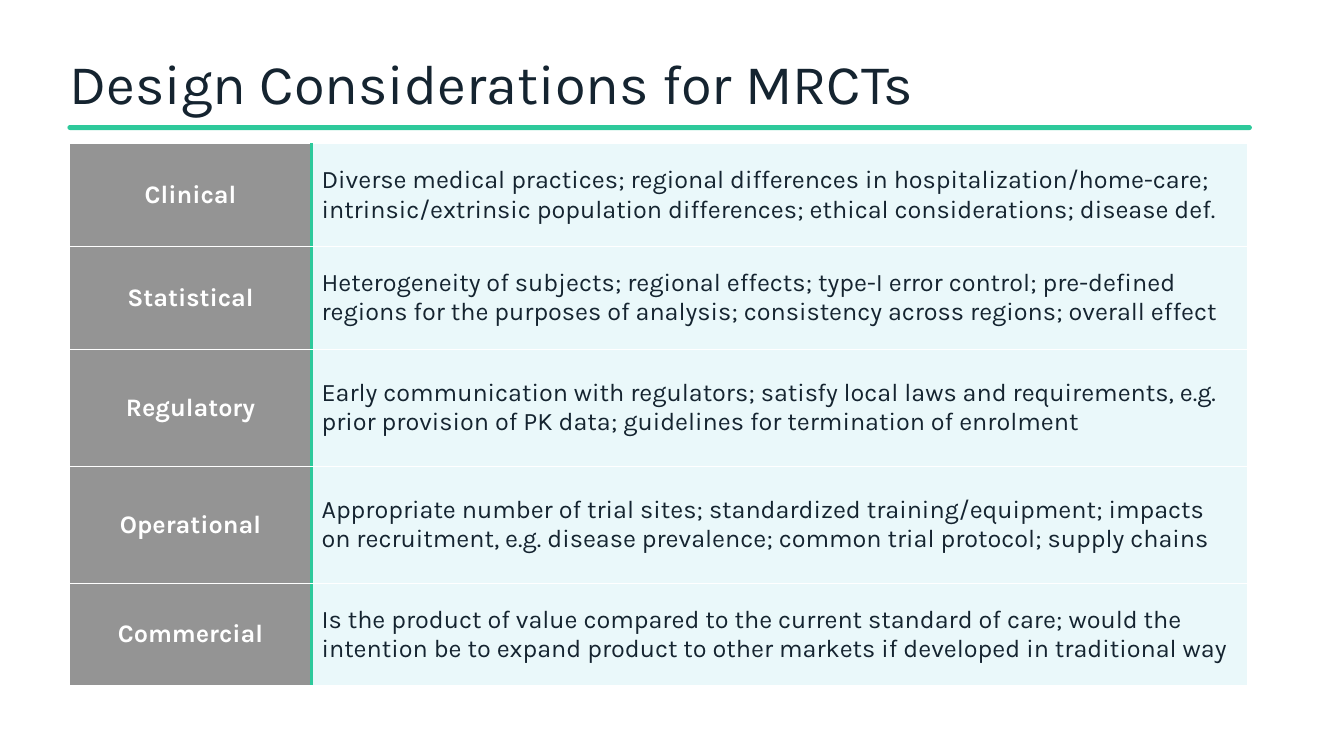
"""Build the slide of design considerations for multi-regional clinical trials."""
from dataclasses import dataclass

from pptx import Presentation
from pptx.dml import color, fill
from pptx.enum import shapes, text
from pptx.oxml import ns, xmlchemy
from pptx.slide import Slide
from pptx.table import _Cell
from pptx.util import Pt

FONT = "Karla"
INK, WHITE, GREEN, GREY, AQUA = "152430", "FFFFFF", "2EC99B", "262626", "D6F2F6"
FILL_OPACITY = 49
LEFT = 49.7
COLUMN_WIDTHS = (172.8, 668.9)


@dataclass(frozen=True)
class Consideration:
    topic: str
    details: str
    height: float


@dataclass(frozen=True)
class Border:
    side: str
    colour: str
    width: float


@dataclass(frozen=True)
class CellStyle:
    fill: str
    ink: str
    bold: bool
    align: text.PP_ALIGN
    borders: tuple[Border, ...]


CONSIDERATIONS = (
    Consideration(
        "Clinical",
        "Diverse medical practices; regional differences in hospitalization/home-care; "
        "intrinsic/extrinsic population differences; ethical considerations; disease def.",
        73.4,
    ),
    Consideration(
        "Statistical",
        "Heterogeneity of subjects; regional effects; type-I error control; pre-defined "
        "regions for the purposes of analysis; consistency across regions; overall effect",
        73.4,
    ),
    Consideration(
        "Regulatory",
        "Early communication with regulators; satisfy local laws and requirements, e.g. "
        "prior provision of PK data; guidelines for termination of enrolment",
        83.6,
    ),
    Consideration(
        "Operational",
        "Appropriate number of trial sites; standardized training/equipment; impacts "
        "on recruitment, e.g. disease prevalence; common trial protocol; supply chains",
        83.6,
    ),
    Consideration(
        "Commercial",
        "Is the product of value compared to the current standard of care; would the "
        "intention be to expand product to other markets if developed in traditional way",
        73.4,
    ),
)

ROW_LINES = (Border("T", WHITE, 1), Border("B", WHITE, 1))
TOPIC_STYLE = CellStyle(
    GREY, WHITE, True, text.PP_ALIGN.CENTER, (Border("R", GREEN, 3), *ROW_LINES)
)
DETAIL_STYLE = CellStyle(
    AQUA, INK, False, text.PP_ALIGN.LEFT, (Border("L", GREEN, 3), *ROW_LINES)
)


def rgb(value: str) -> color.RGBColor:
    return color.RGBColor.from_string(value)


def paint(target: fill.FillFormat, colour: str) -> None:
    target.solid()
    target.fore_color.rgb = rgb(colour)


def add_title(page: Slide, words: str) -> None:
    box = page.shapes.add_textbox(Pt(LEFT), Pt(27.4), Pt(925), Pt(56.2))
    frame = box.text_frame
    frame.word_wrap = True
    frame.vertical_anchor = text.MSO_ANCHOR.BOTTOM
    frame.margin_left = frame.margin_right = frame.margin_top = frame.margin_bottom = 0
    para = frame.paragraphs[0]
    para.text = words
    para.line_spacing = 0.9
    para.font.name, para.font.size = FONT, Pt(40)
    para.font.color.rgb = rgb(INK)


def add_rule(page: Slide) -> None:
    rule = page.shapes.add_shape(
        shapes.MSO_SHAPE.ROUNDED_RECTANGLE, Pt(48.2), Pt(89.3), Pt(846), Pt(3.6)
    )
    rule.adjustments[0] = 0.5
    rule.shadow.inherit = False
    paint(rule.fill, GREEN)
    rule.line.fill.background()


def add_border(properties: xmlchemy.BaseOxmlElement, border: Border, index: int) -> None:
    line = xmlchemy.OxmlElement(f"a:ln{border.side}")
    line.set("w", str(Pt(border.width)))
    solid = xmlchemy.OxmlElement("a:solidFill")
    shade = xmlchemy.OxmlElement("a:srgbClr")
    shade.set("val", border.colour)
    solid.append(shade)
    line.append(solid)
    properties.insert(index, line)


def fill_cell(cell: _Cell, words: str, style: CellStyle) -> None:
    cell.vertical_anchor = text.MSO_ANCHOR.MIDDLE
    cell.margin_left = cell.margin_right = cell.margin_top = cell.margin_bottom = Pt(7.2)
    para = cell.text_frame.paragraphs[0]
    para.text = words
    para.alignment = style.align
    para.font.name, para.font.size, para.font.bold = FONT, Pt(18), style.bold
    para.font.color.rgb = rgb(style.ink)
    paint(cell.fill, style.fill)
    properties = cell._tc.get_or_add_tcPr()
    alpha = xmlchemy.OxmlElement("a:alpha")
    alpha.set("val", str(FILL_OPACITY * 1000))
    properties.find(f".//{ns.qn('a:srgbClr')}").append(alpha)
    for index, border in enumerate(style.borders):
        add_border(properties, border, index)


def add_considerations(page: Slide, rows: tuple[Consideration, ...]) -> None:
    height = sum(row.height for row in rows)
    frame = page.shapes.add_table(
        len(rows), 2, Pt(LEFT), Pt(102.6), Pt(sum(COLUMN_WIDTHS)), Pt(height)
    )
    table = frame.table
    table.first_row = table.horz_banding = False
    for column, width in zip(table.columns, COLUMN_WIDTHS):
        column.width = Pt(width)
    for index, row in enumerate(rows):
        table.rows[index].height = Pt(row.height)
        fill_cell(table.cell(index, 0), row.topic, TOPIC_STYLE)
        fill_cell(table.cell(index, 1), row.details, DETAIL_STYLE)


def main() -> None:
    deck = Presentation()
    deck.slide_width, deck.slide_height = Pt(960), Pt(540)
    page = deck.slides.add_slide(deck.slide_layouts[6])
    add_rule(page)
    add_title(page, "Design Considerations for MRCTs")
    add_considerations(page, CONSIDERATIONS)
    deck.save("out.pptx")


if __name__ == "__main__":
    main()
